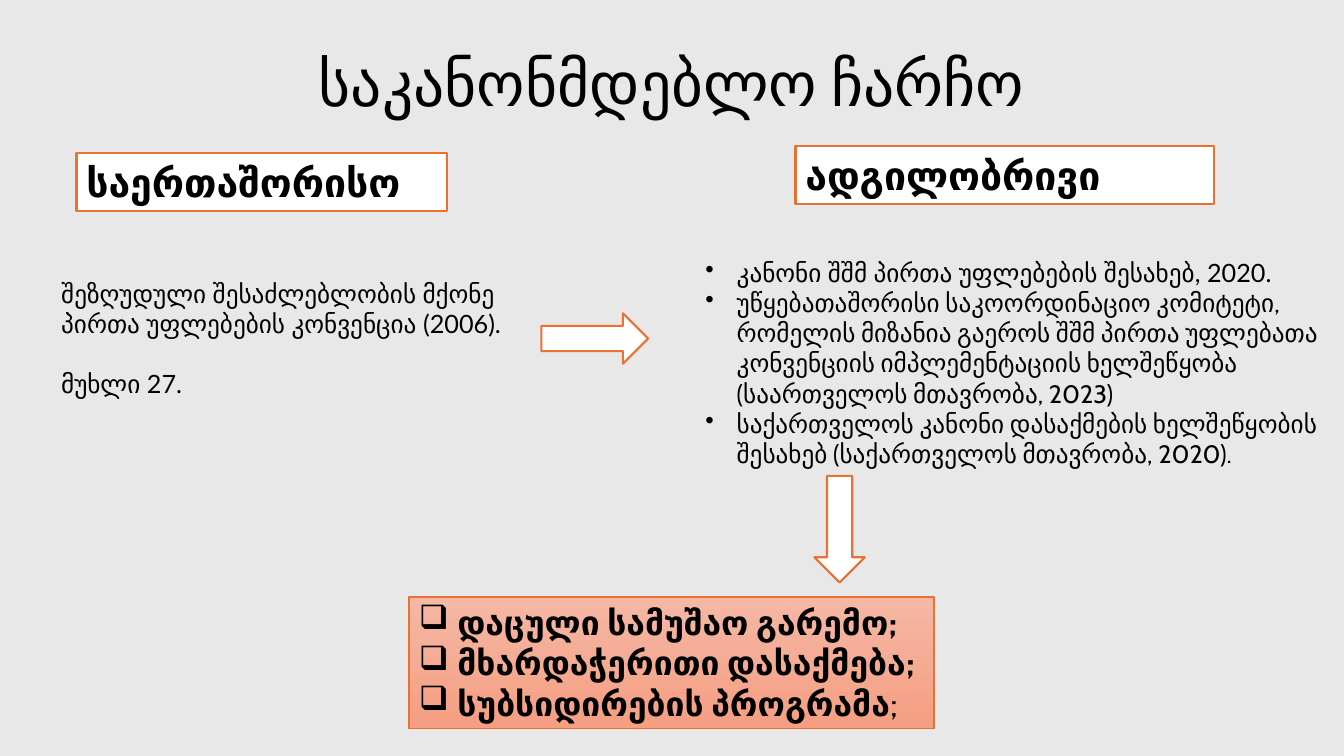
from lxml import etree
from pptx import Presentation
from pptx import util as u
from pptx.dml.color import RGBColor
from pptx.enum import shapes, text
from pptx.oxml.ns import qn

COLUMNS, ROWS = 32, 18


def colour(hex_code):
    return RGBColor.from_string(hex_code)


def style(target, values):
    for name, value in values.items():
        setattr(target, name, value)


class Board:
    ink, paper, accent, backdrop = "000000", "FFFFFF", "E97132", "E8E8E8"
    heading, body = "Cabin", "Lato"

    def __init__(self, deck):
        self.cell_w = deck.slide_width / COLUMNS
        self.cell_h = deck.slide_height / ROWS
        self.slide = deck.slides.add_slide(deck.slide_layouts[6])
        background = self.slide.background.fill
        background.solid()
        background.fore_color.rgb = colour(self.backdrop)

    def place(self, column, row, width, height):
        return (round(column * self.cell_w), round(row * self.cell_h),
                round(width * self.cell_w), round(height * self.cell_h))

    def fill_text(self, shape, paragraphs, size, bullet=None, indent=0,
                  anchor=text.MSO_ANCHOR.TOP, **layout):
        frame = shape.text_frame
        style(frame, {"word_wrap": True, "vertical_anchor": anchor})
        for index, runs in enumerate(paragraphs):
            line = frame.add_paragraph() if index else frame.paragraphs[0]
            style(line, {"alignment": text.PP_ALIGN.LEFT, **layout})
            if index == 0:
                line.space_before = u.Pt(0)
            if bullet:
                props = line._p.get_or_add_pPr()
                props.set("marL", str(u.Inches(indent)))
                props.set("indent", str(-u.Inches(indent)))
                etree.SubElement(props, qn("a:buChar"), char=bullet)
            for words, font, bold in runs:
                run = line.add_run()
                run.text = words
                style(run.font, {"name": font, "size": u.Pt(size), "bold": bold})
                run.font.color.rgb = colour(self.ink)

    def words(self, area, paragraphs, size, **layout):
        box = self.slide.shapes.add_textbox(*self.place(*area))
        self.fill_text(box, paragraphs, size, **layout)

    def block(self, kind, area, line_width=1.5, gradient=None, rotation=0):
        shape = self.slide.shapes.add_shape(kind, *self.place(*area))
        shape.shadow.inherit = False
        shape.rotation = rotation
        if gradient:
            shape.fill.gradient()
            shape.fill.gradient_angle = 270
            for stop, shade in zip(shape.fill.gradient_stops, gradient):
                stop.color.rgb = colour(shade)
        else:
            shape.fill.solid()
            shape.fill.fore_color.rgb = colour(self.paper)
        shape.line.color.rgb = colour(self.accent)
        shape.line.width = u.Pt(line_width)
        return shape

    def label(self, area, words):
        box = self.block(shapes.MSO_SHAPE.RECTANGLE, area)
        self.fill_text(box, [[(words, self.heading, True)]], 28)

    def arrow(self, column, row, rotation=0):
        self.block(shapes.MSO_SHAPE.RIGHT_ARROW, (column, row, 2.54, 1.2),
                   rotation=rotation)


def main():
    deck = Presentation()
    style(deck, {"slide_width": u.Inches(13.33), "slide_height": u.Inches(7.5)})
    board = Board(deck)
    heading, body = board.heading, board.body

    board.words((2.2, 0.96, 27.6, 2.18),
                [[("საკანონმდებლო ჩარჩო", heading, False)]], 44,
                anchor=text.MSO_ANCHOR.MIDDLE,
                alignment=text.PP_ALIGN.CENTER, line_spacing=0.9)

    convention = ["შეზღუდული შესაძლებლობის მქონე პირთა უფლებების კონვენცია (2006).",
                  "მუხლი 27."]
    board.words((1.22, 6.5, 12.55, 3.14),
                [[(words, body, False)] for words in convention], 18,
                space_before=u.Pt(21.6))

    board.label((1.82, 3.65, 8.83, 1.37), "საერთაშორისო")
    board.label((18.94, 3.48, 9.96, 1.37), "ადგილობრივი")

    laws = [
        ("კანონი შშმ პირთა უფლებების შესახებ, 2020.", body),
        ("უწყებათაშორისი საკოორდინაციო კომიტეტი, რომელის მიზანია გაეროს შშმ "
         "პირთა უფლებათა კონვენციის იმპლემენტაციის ხელშეწყობა "
         "(საართველოს მთავრობა, 2023)", heading),
        ("საქართველოს კანონი დასაქმების ხელშეწყობის შესახებ "
         "(საქართველოს მთავრობა, 2020).", heading),
    ]
    board.words((16.56, 6, 16.01, 5.33),
                [[(words, font, False)] for words, font in laws], 18,
                bullet="•", indent=0.31)

    outcomes = [
        [("დაცული სამუშაო გარემო;", heading, True)],
        [("მხარდაჭერითი დასაქმება;", heading, True)],
        [("სუბსიდირების პროგრამა", heading, True), (";", heading, False)],
    ]
    outcome_box = board.block(shapes.MSO_SHAPE.RECTANGLE, (9.74, 14.21, 12.5, 3.14),
                              line_width=1, gradient=("F5B8A5", "F59E82"))
    board.fill_text(outcome_box, outcomes, 24, bullet="❑", indent=0.38)

    board.arrow(12.89, 7.46)
    board.arrow(18.72, 12, rotation=90)
    deck.save("out.pptx")


if __name__ == "__main__":
    main()
